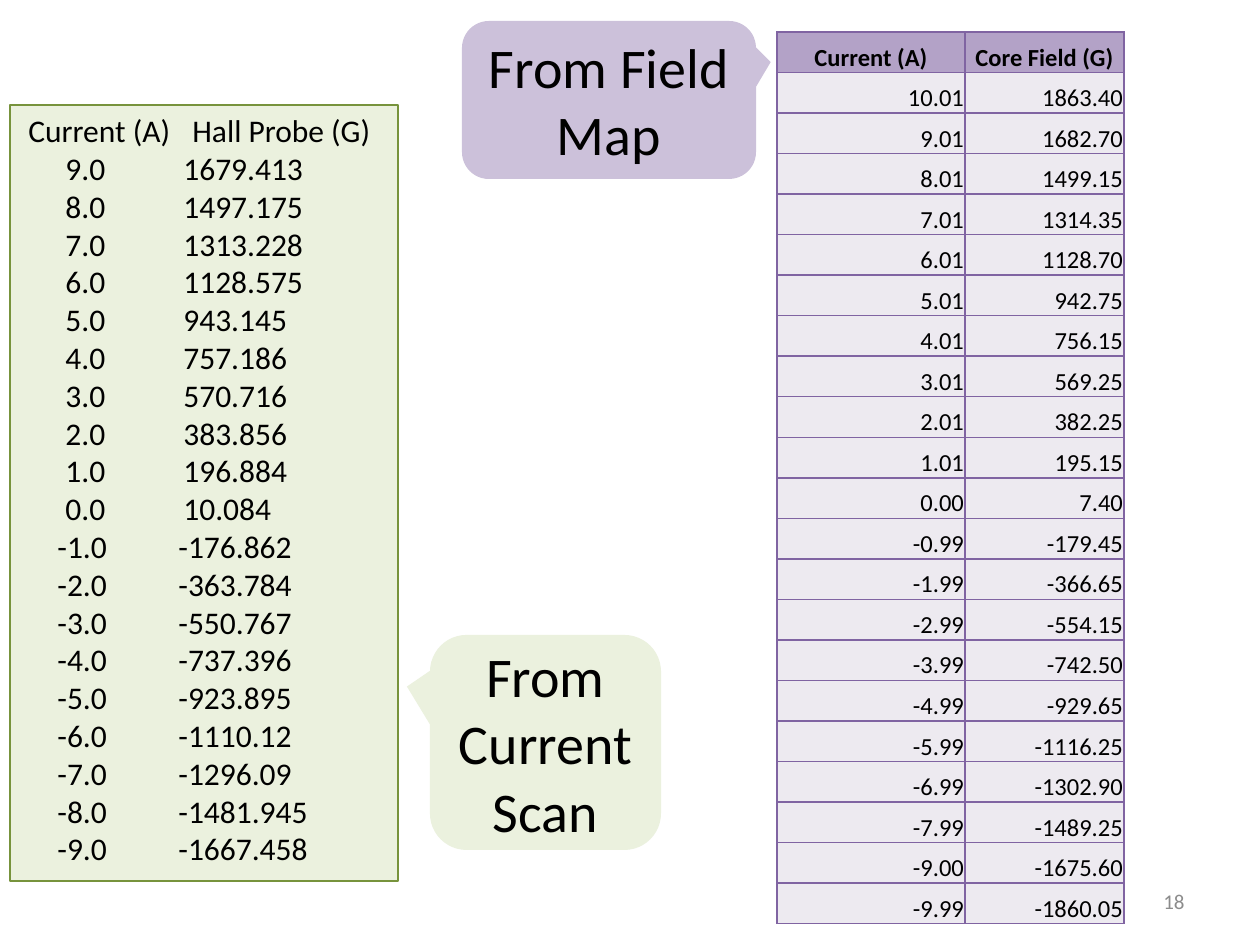
import dataclasses

import lxml.etree
import pptx
import pptx.dml.color
import pptx.enum.shapes
import pptx.enum.text
import pptx.oxml.ns
import pptx.util

ALIGN = pptx.enum.text.PP_ALIGN
ANCHOR = pptx.enum.text.MSO_ANCHOR
SHAPE = pptx.enum.shapes.MSO_SHAPE
PX_PER_INCH = 126

HALL_PROBE = (
    "1679.413", "1497.175", "1313.228", "1128.575", "943.145", "757.186", "570.716",
    "383.856", "196.884", "10.084", "-176.862", "-363.784", "-550.767", "-737.396",
    "-923.895", "-1110.12", "-1296.09", "-1481.945", "-1667.458",
)
FIELD_MAP = (
    ("Current (A)", "Core Field (G)"),
    ("10.01", "1863.40"), ("9.01", "1682.70"), ("8.01", "1499.15"),
    ("7.01", "1314.35"), ("6.01", "1128.70"), ("5.01", "942.75"),
    ("4.01", "756.15"), ("3.01", "569.25"), ("2.01", "382.25"),
    ("1.01", "195.15"), ("0.00", "7.40"), ("-0.99", "-179.45"),
    ("-1.99", "-366.65"), ("-2.99", "-554.15"), ("-3.99", "-742.50"),
    ("-4.99", "-929.65"), ("-5.99", "-1116.25"), ("-6.99", "-1302.90"),
    ("-7.99", "-1489.25"), ("-9.00", "-1675.60"), ("-9.99", "-1860.05"),
)


@dataclasses.dataclass(frozen=True)
class Theme:
    """Colours, font and type sizes of the slide."""

    font: str = "Calibri"
    text: str = "000000"
    muted: str = "8C8C8C"
    scan_fill: str = "EBF1DE"
    scan_line: str = "77933C"
    map_fill: str = "CCC1DA"
    header_fill: str = "B3A2C7"
    cell_fill: str = "EDEAF0"
    border: str = "8064A2"
    callout_size: int = 32
    list_size: int = 18
    table_size: int = 14
    number_size: int = 12


THEME = Theme()


def px(length):
    """Turn whole pixels into EMU."""
    return pptx.util.Emu(round(length * pptx.util.Inches(1) / PX_PER_INCH))


def rgb(colour):
    """Turn a hex string into a colour."""
    return pptx.dml.color.RGBColor.from_string(colour)


def style_text(frame, size, align, colour=THEME.text, bold=False):
    """Format every paragraph and run of a text frame."""
    for para in frame.paragraphs:
        para.alignment = align
        for span in para.runs:
            span.font.name = THEME.font
            span.font.size = pptx.util.Pt(size)
            span.font.bold = bold
            span.font.color.rgb = rgb(colour)


def add_box(page, kind, bounds, fill):
    """Add a filled preset shape without line or shadow."""
    box = page.shapes.add_shape(kind, *map(px, bounds))
    box.shadow.inherit = False
    box.fill.solid()
    box.fill.fore_color.rgb = rgb(fill)
    box.line.fill.background()
    box.text_frame.word_wrap = True
    return box


def add_callout(page, bounds, fill, text, pointer):
    """Add a rounded callout whose tip lies at the pointer fractions."""
    box = add_box(page, SHAPE.ROUNDED_RECTANGULAR_CALLOUT, bounds, fill)
    for index, value in enumerate(pointer):
        box.adjustments[index] = value
    box.text_frame.text = text
    box.text_frame.vertical_anchor = ANCHOR.MIDDLE
    style_text(box.text_frame, THEME.callout_size, ALIGN.CENTER)


def set_tabs(para, stops):
    """Give a paragraph left tab stops."""
    tabs = lxml.etree.SubElement(
        para._p.get_or_add_pPr(), pptx.oxml.ns.qn("a:tabLst"))
    for stop in stops:
        lxml.etree.SubElement(
            tabs, pptx.oxml.ns.qn("a:tab"), pos=str(px(stop)), algn="l")


def add_scan_list(page, bounds):
    """Add the list of currents and Hall probe readings."""
    box = add_box(page, SHAPE.RECTANGLE, bounds, THEME.scan_fill)
    box.line.color.rgb = rgb(THEME.scan_line)
    box.line.width = pptx.util.Pt(0.75)
    frame = box.text_frame
    frame.vertical_anchor = ANCHOR.TOP
    rows = [("Current (A)", "Hall Probe (G)")]
    rows += [(f"{9 - step:.1f}", field) for step, field in enumerate(HALL_PROBE)]
    frame.text = "\n".join(f"\t{current}\t{field}" for current, field in rows)
    style_text(frame, THEME.list_size, ALIGN.LEFT)
    for para, (current, field) in zip(frame.paragraphs, rows):
        if current == "Current (A)":
            set_tabs(para, (6, 170))
        elif field.startswith("-"):
            set_tabs(para, (35, 156))
        else:
            set_tabs(para, (43, 161))


def set_borders(cell):
    """Draw a thin line on all four sides of a cell."""
    properties = cell._tc.get_or_add_tcPr()
    for index, side in enumerate(("lnL", "lnR", "lnT", "lnB")):
        line = lxml.etree.Element(
            pptx.oxml.ns.qn(f"a:{side}"), w=str(pptx.util.Pt(1)))
        fill = lxml.etree.SubElement(line, pptx.oxml.ns.qn("a:solidFill"))
        lxml.etree.SubElement(
            fill, pptx.oxml.ns.qn("a:srgbClr"), val=THEME.border)
        properties.insert(index, line)


def add_field_table(page, bounds, widths):
    """Add the field map table with a header row."""
    frame = page.shapes.add_table(len(FIELD_MAP), len(widths), *map(px, bounds))
    table = frame.table
    table.horz_banding = False
    for column, width in zip(table.columns, widths):
        column.width = px(width)
    for row_index, values in enumerate(FIELD_MAP):
        header = row_index == 0
        for column_index, value in enumerate(values):
            cell = table.cell(row_index, column_index)
            cell.text = value
            cell.vertical_anchor = ANCHOR.BOTTOM
            cell.margin_left = cell.margin_right = cell.margin_top = px(1)
            cell.margin_bottom = 0
            cell.fill.solid()
            cell.fill.fore_color.rgb = rgb(
                THEME.header_fill if header else THEME.cell_fill)
            style_text(cell.text_frame, THEME.table_size,
                       ALIGN.CENTER if header else ALIGN.RIGHT, bold=header)
            set_borders(cell)


def add_page_number(page, bounds, number):
    """Add the slide number in the lower right corner."""
    frame = page.shapes.add_textbox(*map(px, bounds)).text_frame
    frame.word_wrap = True
    frame.vertical_anchor = ANCHOR.MIDDLE
    frame.text = number
    style_text(frame, THEME.number_size, ALIGN.RIGHT, THEME.muted)


def main():
    """Build and save the slide."""
    deck = pptx.Presentation()
    deck.slide_width, deck.slide_height = px(1260), px(945)
    page = deck.slides.add_slide(deck.slide_layouts[6])
    add_field_table(page, (777, 32, 347, 892), (188, 159))
    add_callout(page, (462, 21, 294, 158), THEME.map_fill,
                "From Field Map", (0.55, -0.24, 0.17))
    add_scan_list(page, (10, 105, 388, 776))
    add_callout(page, (430, 635, 231, 215), THEME.scan_fill,
                "From Current\nScan", (-0.6, -0.26, 0.17))
    add_page_number(page, (903, 876, 294, 50), "18")
    deck.save("out.pptx")


if __name__ == "__main__":
    main()
